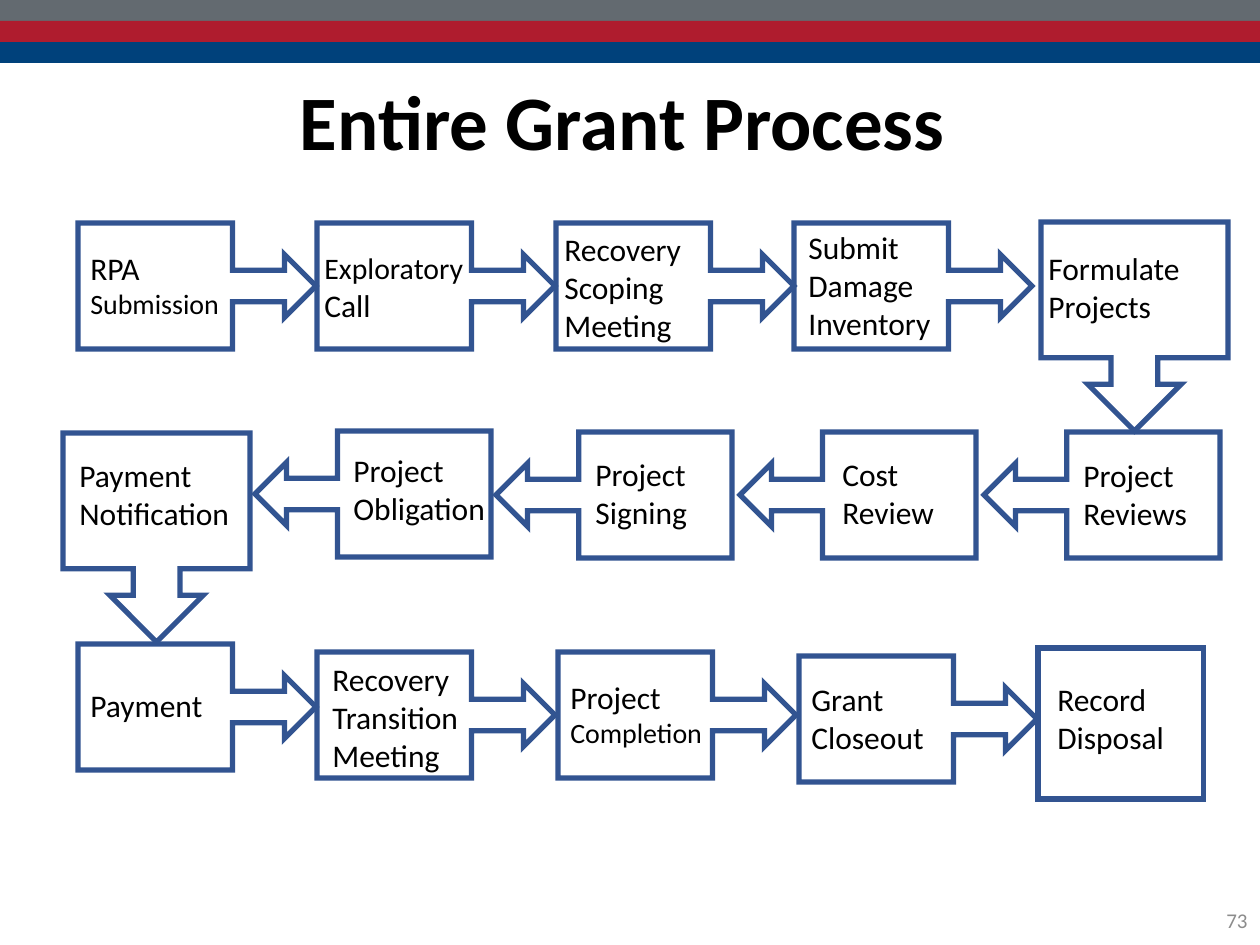
import pptx
import pptx.dml.color
import pptx.enum.shapes
import pptx.enum.text
import pptx.oxml
import pptx.oxml.ns
import pptx.util

PX = 914400 // 126
FONT = "Calibri"
COLORS = {
    "gray": "636A70", "red": "AF1C2E", "navy": "00417B",
    "outline": "325491", "text": "000000", "number": "8C8C8C",
}
SHAPES = pptx.enum.shapes.MSO_SHAPE
ALIGN = pptx.enum.text.PP_ALIGN
ANCHOR = pptx.enum.text.MSO_ANCHOR
AUTO_SIZE = pptx.enum.text.MSO_AUTO_SIZE

# Each step: box left, box top, label offset x, label offset y, label width, runs
FORWARD_STEPS = [
    (78, 223, 0, 20, 158, [("RPA ", 18), ("Submission", 16)]),
    (317, 223, -5, 19, 173, [("Exploratory", 17), (" Call", 18)]),
    (556, 223, -4, 1, 158, [("Recovery Scoping Meeting", 18)]),
    (794, 223, 2, -1, 158, [("Submit Damage Inventory", 18)]),
    (78, 644, 0, 36, 158, [("Payment", 18)]),
    (317, 652, 3, 2, 158, [("Recovery Transition Meeting", 18)]),
    (558, 652, 0, 20, 165, [("Project ", 18), ("Completion", 16)]),
    (799, 656, 0, 18, 165, [("Grant Closeout", 18)]),
]
BACKWARD_STEPS = [
    (984, 432, 87, 18, 158, [("Project Reviews", 18)]),
    (740, 432, 90, 17, 158, [("Cost Review", 18)]),
    (496, 432, 87, 17, 158, [("Project Signing", 18)]),
    (255, 431, 86, 14, 158, [("Project Obligation", 18)]),
]
DOWNWARD_STEPS = [
    (1041, 222, -5, 21, 186, [("Formulate Projects", 18)]),
    (63, 433, 4, 17, 179, [("Payment Notification", 18)]),
]
LAST_STEP = (1038, 648, 7, 26, 165, [("Record Disposal", 18)])


def px(*lengths):
    return [round(length * PX) for length in lengths]


def rgb(name):
    return pptx.dml.color.RGBColor.from_string(COLORS[name])


def style_font(font, color, size=None, bold=None):
    font.name = FONT
    font.color.rgb = rgb(color)
    font.bold = bold
    if size:
        font.size = pptx.util.Pt(size)


def add_bands(slide, left, top, width, height):
    """Stack the three header stripes in equal shares of the box."""
    band_height = height // 3
    for index, color in enumerate(["gray", "red", "navy"]):
        band = slide.shapes.add_shape(
            SHAPES.RECTANGLE,
            *px(left, top + index * band_height, width, band_height))
        band.shadow.inherit = False
        band.fill.solid()
        band.fill.fore_color.rgb = rgb(color)
        band.line.fill.background()


def add_title(slide, left, top, width, height, text):
    title = slide.shapes.title
    title.left, title.top, title.width, title.height = px(left, top, width, height)
    frame = title.text_frame
    frame.text = text
    frame.word_wrap = True
    frame.auto_size = AUTO_SIZE.NONE
    frame.vertical_anchor = ANCHOR.TOP
    paragraph = frame.paragraphs[0]
    paragraph.alignment = ALIGN.CENTER
    paragraph.line_spacing = 0.9
    style_font(paragraph.font, "text", 44, True)


def add_label(slide, left, top, width, runs):
    """Add step text, tall enough for one word on each line."""
    line_count = sum(len(text.split()) for text, size in runs)
    label = slide.shapes.add_textbox(*px(left, top, width, 12 + 38 * line_count))
    frame = label.text_frame
    frame.word_wrap = True
    frame.auto_size = AUTO_SIZE.SHAPE_TO_FIT_TEXT
    paragraph = frame.paragraphs[0]
    style_font(paragraph.font, "text")
    for text, size in runs:
        run = paragraph.add_run()
        run.text = text
        run.font.size = pptx.util.Pt(size)


def add_step(slide, kind, width, height, step, rotation=0):
    """Draw one step; width and height are those seen after a quarter turn."""
    left, top, label_x, label_y, label_width, runs = step
    box = (left, top, width, height)
    if rotation:
        box = (left + (width - height) / 2, top + (height - width) / 2, height, width)
    outline = slide.shapes.add_shape(kind, *px(*box))
    outline.rotation = rotation
    outline.shadow.inherit = False
    outline.fill.background()
    outline.line.color.rgb = rgb("outline")
    outline.line.width = pptx.util.Pt(3)
    line = outline.line._get_or_add_ln()
    miter = pptx.oxml.parse_xml(
        f'<a:miter {pptx.oxml.ns.nsdecls("a")} lim="800000"/>')
    line.append(miter)
    add_label(slide, left + label_x, top + label_y, label_width, runs)


def add_process(slide):
    for step in FORWARD_STEPS:
        add_step(slide, SHAPES.RIGHT_ARROW_CALLOUT, 238, 126, step)
    for step in BACKWARD_STEPS:
        add_step(slide, SHAPES.LEFT_ARROW_CALLOUT, 236, 126, step)
    for step in DOWNWARD_STEPS:
        add_step(slide, SHAPES.RIGHT_ARROW_CALLOUT, 187, 209, step, rotation=90)
    add_step(slide, SHAPES.RECTANGLE, 166, 151, LAST_STEP)


def add_page_number(slide, left, top, width, height, number):
    box = slide.shapes.add_textbox(*px(left, top, width, height))
    frame = box.text_frame
    frame.word_wrap = True
    frame.vertical_anchor = ANCHOR.MIDDLE
    frame.text = number
    paragraph = frame.paragraphs[0]
    paragraph.alignment = ALIGN.RIGHT
    style_font(paragraph.font, "number", 12)


def main():
    presentation = pptx.Presentation()
    presentation.slide_width, presentation.slide_height = px(1260, 945)
    slide = presentation.slides.add_slide(presentation.slide_layouts[5])
    add_bands(slide, 0, 0, 1260, 63)
    add_title(slide, 78, 78, 1089, 129, "Entire Grant Process")
    add_process(slide)
    add_page_number(slide, 977, 895, 283, 50, "73")
    presentation.save("out.pptx")


if __name__ == "__main__":
    main()
